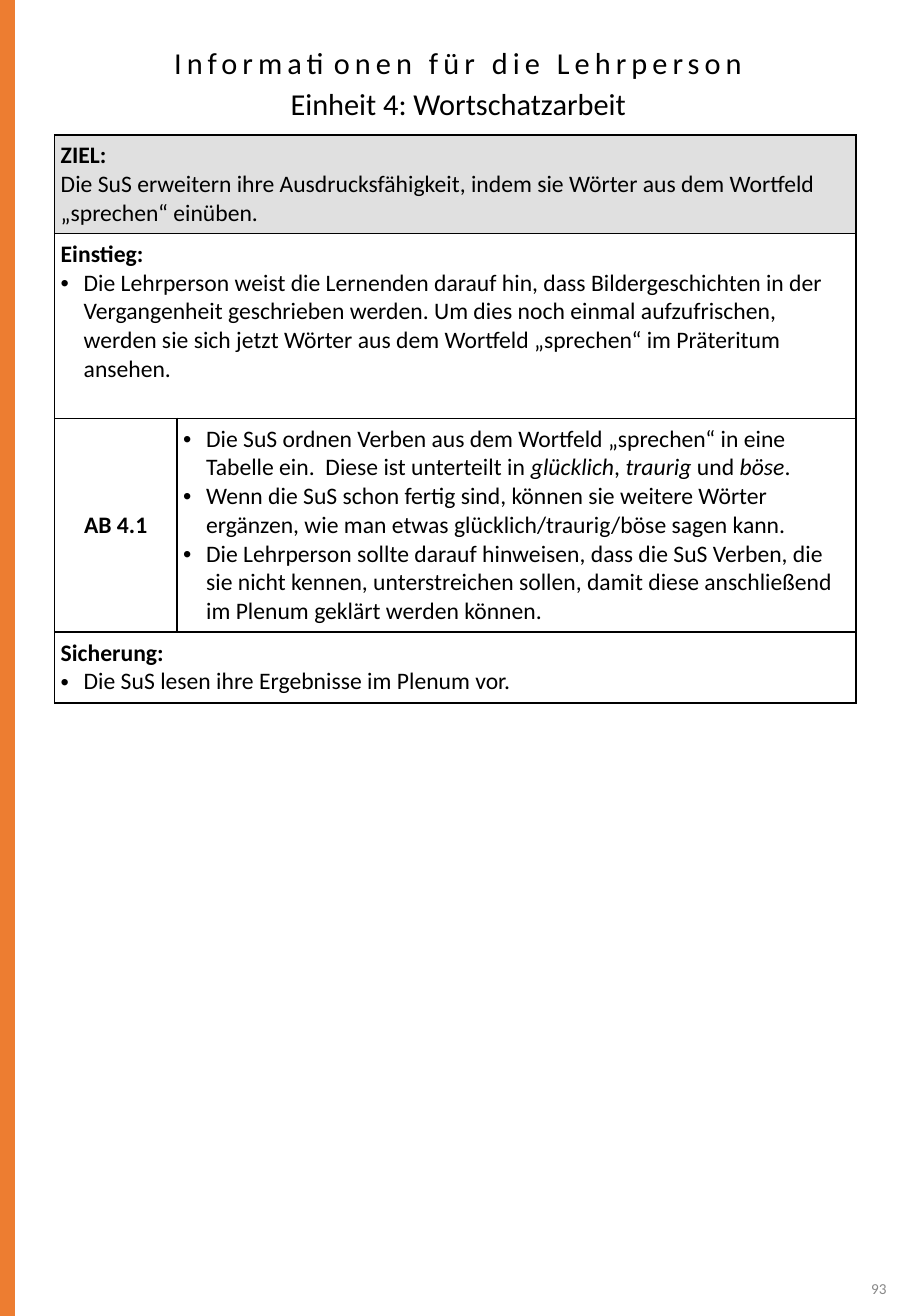
"""Builds the teacher information page for unit 4 on vocabulary work."""
from lxml import etree
from pptx import Presentation
from pptx.dml.color import RGBColor
from pptx.enum.lang import MSO_LANGUAGE_ID as LANG
from pptx.enum.shapes import MSO_CONNECTOR as CONN
from pptx.enum.text import MSO_ANCHOR as ANCHOR, MSO_AUTO_SIZE as AUTO, PP_ALIGN as ALIGN
from pptx.oxml import parse_xml
from pptx.oxml.ns import nsdecls, qn
from pptx.util import Cm, Pt

GOAL = [
    ("head", "ZIEL:"),
    ("text", "Die SuS erweitern ihre Ausdrucksfähigkeit, indem sie Wörter aus dem Wortfeld "
             "„sprechen“ einüben."),
]
INTRO = [
    ("head", "Einstieg:"),
    ("bullet", "Die Lehrperson weist die Lernenden darauf hin, dass Bildergeschichten in der "
               "Vergangenheit geschrieben werden. Um dies noch einmal aufzufrischen, werden sie "
               "sich jetzt Wörter aus dem Wortfeld „sprechen“ im Präteritum ansehen."),
]
WORKSHEET = [("label", "AB 4.1")]
TASKS = [
    ("bullet", "Die SuS ordnen Verben aus dem Wortfeld „sprechen“ in eine Tabelle ein.  "
               "Diese ist unterteilt in *glücklich*, *traurig* und *böse*."),
    ("bullet", "Wenn die SuS schon fertig sind, können sie weitere Wörter ergänzen, "
               "wie man etwas glücklich/traurig/böse sagen kann."),
    ("bullet", "Die Lehrperson sollte darauf hinweisen, dass die SuS Verben, die sie nicht "
               "kennen, unterstreichen sollen, damit diese anschließend im Plenum geklärt "
               "werden können."),
]
RESULTS = [
    ("head", "Sicherung:"),
    ("bullet", "Die SuS lesen ihre Ergebnisse im Plenum vor."),
]
ROWS = [
    (2.06, "E0E0E0", ANCHOR.MIDDLE, [GOAL]),
    (3.86, "FFFFFF", ANCHOR.TOP, [INTRO]),
    (4.45, "FFFFFF", ANCHOR.MIDDLE, [WORKSHEET, TASKS]),
    (1.48, "FFFFFF", ANCHOR.MIDDLE, [RESULTS]),
]


def rgb(code):
    """Return the colour for a hex string."""
    return RGBColor.from_string(code)


class Page:
    """Holds the style and the current slide."""

    font, ink, inset = "Calibri", "000000", Cm(0.13)

    def __init__(self, s):
        """Keep the slide to draw on."""
        self.s = s

    def style(self, r, size, color=ink, bold=False, italic=False):
        """Format one run."""
        f = r.font
        f.name, f.size, f.bold, f.italic = self.font, Pt(size), bold, italic
        f.color.rgb = rgb(color)
        f.language_id = LANG.GERMAN

    def pad(self, box):
        """Give a cell or text frame equal margins."""
        box.margin_left = box.margin_right = box.margin_top = box.margin_bottom = self.inset

    def line_text(self, sp, text, size, color=ink, align=ALIGN.CENTER, anchor=ANCHOR.TOP, wrap=True):
        """Fill a shape with one line of text and return its run."""
        tf = sp.text_frame
        tf.text = text
        tf.word_wrap, tf.auto_size, tf.vertical_anchor = wrap, AUTO.NONE, anchor
        self.pad(tf)
        p = tf.paragraphs[0]
        p.alignment = align
        self.style(p.runs[0], size, color)
        return p.runs[0]

    def title(self, text, x, y, w, h, spacing):
        """Place the title with spaced letters."""
        sp = self.s.shapes.title
        sp.left, sp.top, sp.width, sp.height = Cm(x), Cm(y), Cm(w), Cm(h)
        r = self.line_text(sp, text, 18)
        r.font._element.set("spc", str(spacing * 100))

    def textbox(self, text, x, y, w, h, size, **look):
        """Add a text box with one line."""
        sp = self.s.shapes.add_textbox(Cm(x), Cm(y), Cm(w), Cm(h))
        self.line_text(sp, text, size, **look)

    def stripe(self, x, length, color, width):
        """Add a vertical line from the top edge."""
        sp = self.s.shapes.add_connector(CONN.STRAIGHT, Cm(x), 0, Cm(x), length)
        sp.line.color.rgb, sp.line.width = rgb(color), Pt(width)
        etree.SubElement(sp._element.spPr, qn("a:effectLst"))

    def bullet(self, p):
        """Give a paragraph a hanging bullet."""
        pPr = p._p.get_or_add_pPr()
        pPr.set("marL", str(Cm(0.48)))
        pPr.set("indent", str(-Cm(0.48)))
        etree.SubElement(pPr, qn("a:buFont")).set("typeface", "Arial")
        etree.SubElement(pPr, qn("a:buChar")).set("char", "•")

    def fill_text(self, tf, content):
        """Write paragraphs; words between asterisks become italic."""
        for n, (kind, text) in enumerate(content):
            p = tf.paragraphs[0] if n == 0 else tf.add_paragraph()
            p.alignment = ALIGN.CENTER if kind == "label" else ALIGN.LEFT
            if kind == "bullet":
                self.bullet(p)
            for i, part in enumerate(text.split("*")):
                r = p.add_run()
                r.text = part
                self.style(r, 14, bold=kind in ("head", "label"), italic=i % 2 == 1)

    def borders(self, cell):
        """Draw a thin line on all four sides of a cell."""
        tcPr = cell._tc.get_or_add_tcPr()
        for i, side in enumerate("LRTB"):
            tcPr.insert(i, parse_xml(
                f'<a:ln{side} {nsdecls("a")} w="{Pt(1)}"><a:solidFill>'
                f'<a:srgbClr val="{self.ink}"/></a:solidFill></a:ln{side}>'))

    def table(self, x, y, widths, rows):
        """Add the plan; a row with one text spans all columns."""
        height = sum(row[0] for row in rows)
        t = self.s.shapes.add_table(len(rows), len(widths), Cm(x), Cm(y),
                                    Cm(sum(widths)), Cm(height)).table
        t.first_row = t.horz_banding = False
        for col, w in zip(t.columns, widths):
            col.width = Cm(w)
        for n, (h, color, anchor, texts) in enumerate(rows):
            t.rows[n].height = Cm(h)
            cells = list(t.rows[n].cells)
            for cell in cells:
                cell.fill.solid()
                cell.fill.fore_color.rgb = rgb(color)
                cell.vertical_anchor = anchor
                self.pad(cell)
                self.borders(cell)
            if len(texts) == 1:
                cells[0].merge(cells[-1])
            for cell, content in zip(cells, texts):
                self.fill_text(cell.text_frame, content)


def main():
    """Build and save the page."""
    prs = Presentation()
    prs.slide_width, prs.slide_height = Cm(19.05), Cm(27.51)
    page = Page(prs.slides.add_slide(prs.slide_layouts[5]))
    page.table(1.14, 2.82, [2.56, 14.2], ROWS)
    page.textbox("Einheit 4: Wortschatzarbeit", 0.43, 1.65, 18.31, 1.02, 18)
    page.title("Informationen für die Lehrperson", 0.43, 0.79, 18.31, 1.02, spacing=3)
    page.textbox("93", 18.06, 26.62, 0.61, 0.64, 9, color="888888",
                 align=ALIGN.RIGHT, anchor=ANCHOR.MIDDLE, wrap=False)
    page.stripe(0.13, prs.slide_height, "ED7D31", 10)
    prs.save("out.pptx")


if __name__ == "__main__":
    main()
